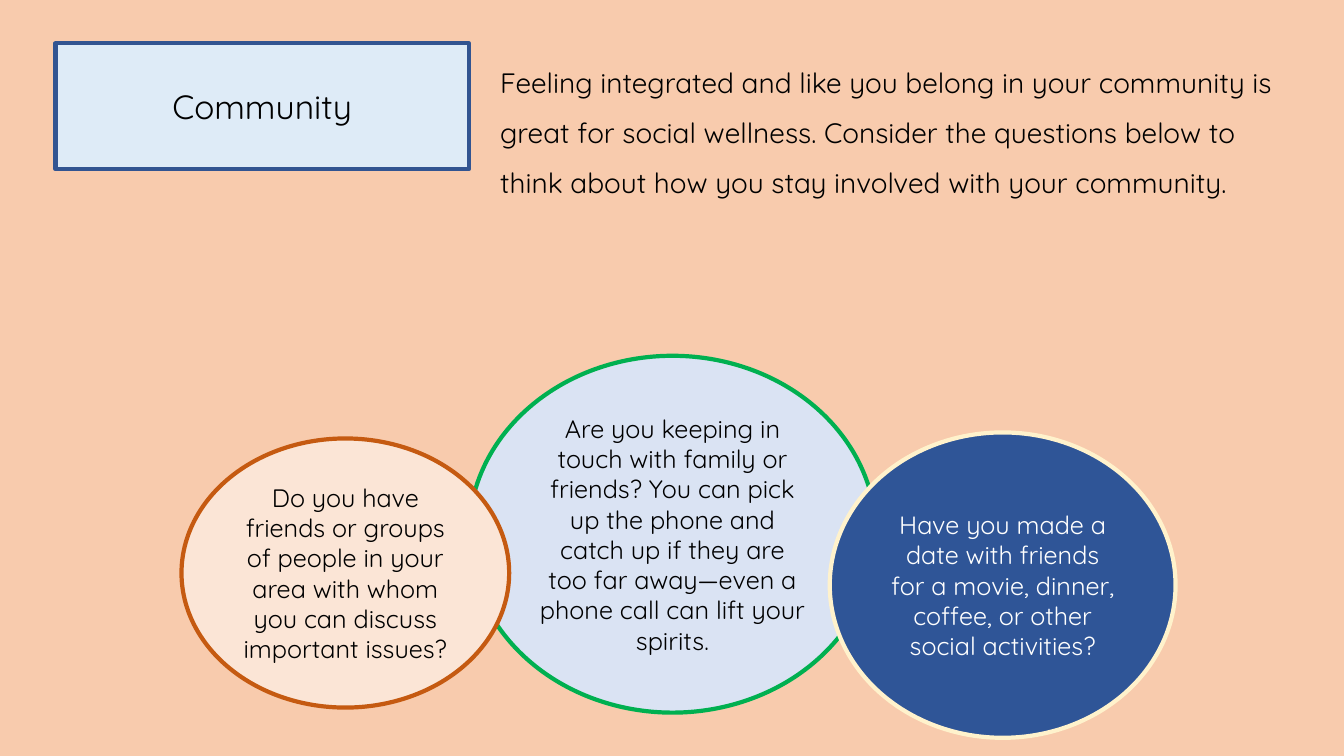
"""Build the Community slide: a heading, an introduction and three question ovals."""
import lxml.etree
import pptx
import pptx.dml.color
import pptx.enum.shapes
import pptx.enum.text
import pptx.oxml.ns
import pptx.util

RGB = pptx.dml.color.RGBColor
PEACH = RGB(0xF8, 0xCB, 0xAD)
BLACK = RGB(0x00, 0x00, 0x00)
WHITE = RGB(0xFF, 0xFF, 0xFF)
ICE = RGB(0xDE, 0xEB, 0xF7)
BLUE = RGB(0x32, 0x54, 0x91)
LAVENDER = RGB(0xDA, 0xE3, 0xF3)
GREEN = RGB(0x00, 0xB0, 0x50)
NAVY = RGB(0x2F, 0x55, 0x97)
CREAM = RGB(0xFF, 0xF2, 0xCC)
BLUSH = RGB(0xFB, 0xE5, 0xD6)
RUST = RGB(0xC5, 0x5A, 0x11)

PX = 9144
FONT = "Quicksand"
SLIDE_SIZE = (1333, 750)
ALIGN = pptx.enum.text.PP_ALIGN
ANCHOR = pptx.enum.text.MSO_ANCHOR

HEADING = ("Community", (55, 43, 410, 125))
INTRO = (
    "Feeling integrated and like you belong in your community is great for social wellness. "
    "Consider the questions below to think about how you stay involved with your community.",
    (486, 43, 792, 206),
)
QUESTIONS = [
    ("Are you keeping in touch with family or friends? You can pick up the phone and catch up "
     "if they are too far away—even a phone call can lift your spirits.",
     (465, 353, 404, 354), LAVENDER, GREEN, BLACK),
    ("Have you made a date with friends for a movie, dinner, coffee, or other social activities?",
     (823, 429, 343, 303), NAVY, CREAM, WHITE),
    ("Do you have friends or groups of people in your area with whom you can discuss "
     "important issues?",
     (180, 435, 325, 267), BLUSH, RUST, BLACK),
]


def set_all(target, values):
    """Set every named attribute of the target."""
    for name, value in values.items():
        setattr(target, name, value)


def place(box, frame):
    """Move and size a box given in px."""
    set_all(box, dict(zip(("left", "top", "width", "height"), (n * PX for n in frame))))


def paint(box, fill, line):
    """Give a box a solid fill and a 3 pt outline."""
    box.fill.solid()
    box.fill.fore_color.rgb = fill
    box.line.color.rgb = line
    box.line.width = pptx.util.Pt(3)


def write(box, text, size, color, anchor=ANCHOR.MIDDLE, **para_format):
    """Write one formatted paragraph and return it."""
    set_all(box.text_frame, {
        "word_wrap": True,
        "auto_size": pptx.enum.text.MSO_AUTO_SIZE.NONE,
        "vertical_anchor": anchor,
    })
    para = box.text_frame.paragraphs[0]
    set_all(para, para_format)
    span = para.add_run()
    span.text = text
    set_all(span.font, {"name": FONT, "size": pptx.util.Pt(size)})
    span.font.color.rgb = color
    return para


def main():
    """Assemble and save the deck."""
    deck = pptx.Presentation()
    deck.slide_width, deck.slide_height = (n * PX for n in SLIDE_SIZE)
    page = deck.slides.add_slide(deck.slide_layouts[1])
    page.background.fill.solid()
    page.background.fill.fore_color.rgb = PEACH
    title, body = page.placeholders

    text, frame = HEADING
    place(title, frame)
    qn = pptx.oxml.ns.qn
    outline = lxml.etree.SubElement(title.element.spPr, qn("a:prstGeom"), prst="roundRect")
    lxml.etree.SubElement(outline, qn("a:avLst"))
    paint(title, ICE, BLUE)
    write(title, text, 24, BLACK, alignment=ALIGN.CENTER)

    text, frame = INTRO
    place(body, frame)
    para = write(body, text, 20, BLACK, ANCHOR.TOP, alignment=ALIGN.LEFT,
                 line_spacing=1.5, space_before=pptx.util.Pt(0))
    settings = para._p.get_or_add_pPr()
    settings.set("marL", "0")
    settings.set("indent", "0")
    lxml.etree.SubElement(settings, qn("a:buNone"))

    for text, frame, fill, line, color in QUESTIONS:
        oval = page.shapes.add_shape(pptx.enum.shapes.MSO_SHAPE.OVAL, *(n * PX for n in frame))
        oval.shadow.inherit = False
        paint(oval, fill, line)
        write(oval, text, 18, color, alignment=ALIGN.CENTER)

    deck.save("out.pptx")


if __name__ == "__main__":
    main()
